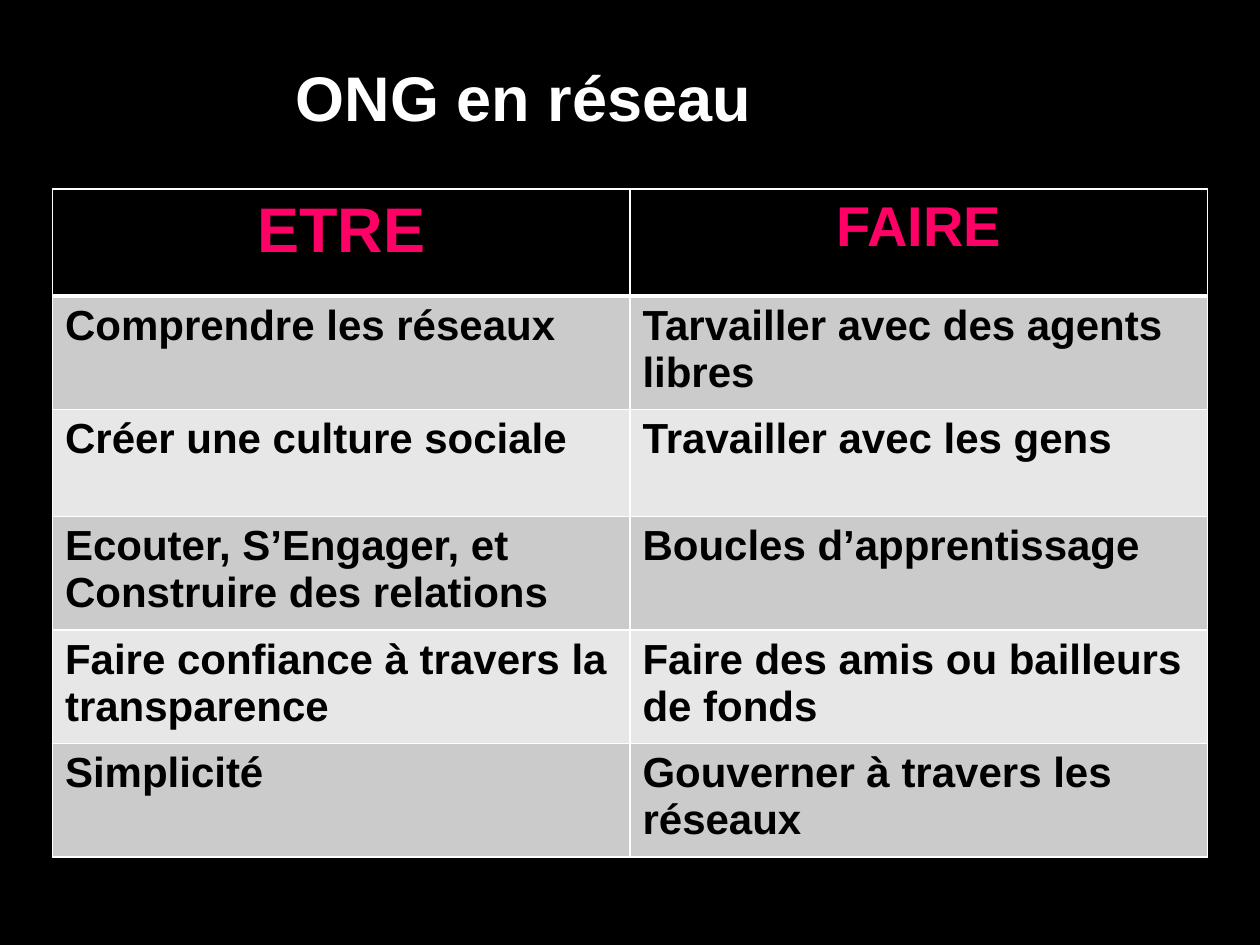
from dataclasses import dataclass

from lxml.etree import SubElement as Sub
from pptx import Presentation
from pptx.dml.color import RGBColor as Rgb
from pptx.enum.text import PP_ALIGN as Align
from pptx.oxml.ns import qn
from pptx.util import Inches, Pt


@dataclass(frozen=True)
class Theme:
    """Colours, type sizes and line widths of the slide."""
    font: str = "Arial"
    back: str = "000000"
    light: str = "FFFFFF"
    ink: str = "000000"
    head: str = "FF0066"
    bands: tuple = ("CBCBCB", "E7E7E7")
    title: int = 36
    heads: tuple = (36, 32)
    body: int = 24
    thin: int = 1
    thick: int = 3


THEME = Theme()
WIDE, HIGH = Inches(10), Inches(7.5)
COL, ROW = WIDE / 24, HIGH / 18
TALLS = (2.04, 2.16, 2.04, 2.16, 2.16, 2.16)
ROWS = (
    ("ETRE", "FAIRE"),
    ("Comprendre les réseaux", "Tarvailler avec des agents libres"),
    ("Créer une culture sociale", "Travailler avec les gens"),
    ("Ecouter, S’Engager, et Construire des relations", "Boucles d’apprentissage"),
    ("Faire confiance à travers la transparence", "Faire des amis ou bailleurs de fonds"),
    ("Simplicité", "Gouverner à travers les réseaux"),
)


def grid(left, top, wide, high):
    """Turn grid columns and rows into a box of lengths."""
    return [round(n * unit) for n, unit in zip((left, top, wide, high), (COL, ROW) * 2)]


def write(frame, text, size, color, align=Align.LEFT):
    """Fill a text frame with one bold paragraph."""
    frame.text = text
    para = frame.paragraphs[0]
    para.alignment = align
    font = para.runs[0].font
    font.name, font.size, font.bold = THEME.font, Pt(size), True
    font.color.rgb = Rgb.from_string(color)


def edge(cell, side, width):
    """Draw one border of a table cell."""
    line = Sub(cell._tc.get_or_add_tcPr(), qn(f"a:ln{side}"), w=str(Pt(width)))
    Sub(Sub(line, qn("a:solidFill")), qn("a:srgbClr"), val=THEME.light)


def style(cell, fill, top, low):
    """Give a cell its borders and its fill."""
    for side, width in zip("LRTB", (THEME.thin, THEME.thin, top, low)):
        edge(cell, side, width)
    cell.fill.solid()
    cell.fill.fore_color.rgb = Rgb.from_string(fill)


def add_title(slide, box):
    """Place the slide title in the box."""
    frame = slide.shapes.add_textbox(*box).text_frame
    frame.word_wrap = True
    write(frame, "ONG en réseau", THEME.title, THEME.light)


def add_grid(slide, box):
    """Place the table of being and doing in the box."""
    table = slide.shapes.add_table(len(ROWS), len(ROWS[0]), *box).table
    for row, tall in zip(table.rows, TALLS):
        row.height = round(box[3] * tall / sum(TALLS))
    for r, texts in enumerate(ROWS):
        fill = THEME.bands[(r - 1) % 2] if r else THEME.back
        top = THEME.thick if r == 1 else THEME.thin
        low = THEME.thin if r else THEME.thick
        for c, text in enumerate(texts):
            cell = table.cell(r, c)
            style(cell, fill, top, low)
            if r:
                write(cell.text_frame, text, THEME.body, THEME.ink)
            else:
                write(cell.text_frame, text, THEME.heads[c], THEME.head, Align.CENTER)


def main():
    """Build the slide and save it."""
    deck = Presentation()
    deck.slide_width, deck.slide_height = WIDE, HIGH
    slide = deck.slides.add_slide(deck.slide_layouts[6])
    slide.background.fill.solid()
    slide.background.fill.fore_color.rgb = Rgb.from_string(THEME.back)
    add_title(slide, grid(5.4, 1, 14, 1.7))
    add_grid(slide, grid(1, 3.6, 22, sum(TALLS)))
    deck.save("out.pptx")


if __name__ == "__main__":
    main()
